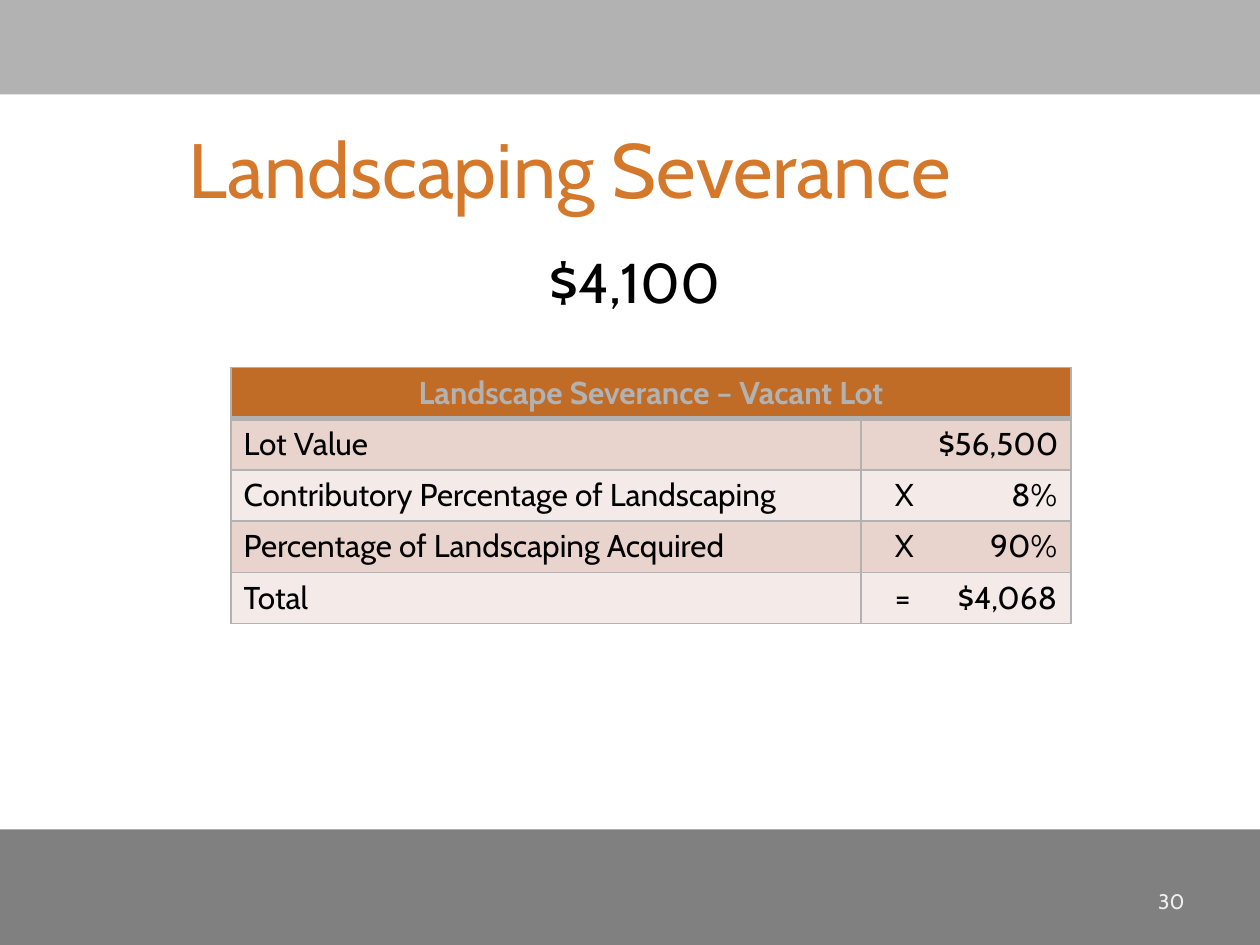
from lxml import etree
from pptx import Presentation
from pptx.dml.color import RGBColor
from pptx.enum.shapes import MSO_SHAPE
from pptx.enum.text import MSO_ANCHOR, MSO_AUTO_SIZE, PP_ALIGN
from pptx.oxml.ns import qn
from pptx.util import Inches, Pt

RECTANGLE = MSO_SHAPE.RECTANGLE
MIDDLE, TOP = MSO_ANCHOR.MIDDLE, MSO_ANCHOR.TOP
NO_FIT = MSO_AUTO_SIZE.NONE
LEFT, CENTER, RIGHT = PP_ALIGN.LEFT, PP_ALIGN.CENTER, PP_ALIGN.RIGHT
TITLE_AND_CONTENT = 1


def color(value):
    return RGBColor.from_string(value)


class SlideBuilder:
    font = "Cabin"
    white, black, grey, dark_grey = "FFFFFF", "000000", "B2B2B2", "808080"
    orange, header_fill = "D4782C", "C06C27"
    row_fills = ("E8D4CD", "F4EBE8")
    columns, rows = 120, 90
    sign_indent, cell_margin = 0.27, 0.1

    def __init__(self, presentation):
        self.unit_x = presentation.slide_width / self.columns
        self.unit_y = presentation.slide_height / self.rows
        layout = presentation.slide_layouts[TITLE_AND_CONTENT]
        self.slide = presentation.slides.add_slide(layout)

    def box(self, left, top, width, height):
        return (int(left * self.unit_x), int(top * self.unit_y),
                int(width * self.unit_x), int(height * self.unit_y))

    def fill(self, target, value):
        target.fill.solid()
        target.fill.fore_color.rgb = color(value)

    def set_text(self, frame, text, size, value, align, bold=False):
        frame.text = text
        paragraph = frame.paragraphs[0]
        paragraph.alignment = align
        font = paragraph.font
        font.name, font.size, font.bold = self.font, Pt(size), bold
        font.color.rgb = color(value)
        return paragraph

    def band(self, top, height, value):
        shape = self.slide.shapes.add_shape(
            RECTANGLE, *self.box(0, top, self.columns, height))
        shape.shadow.inherit = False
        shape.line.fill.background()
        self.fill(shape, value)

    def placeholder(self, index, box, text, size, value, anchor, right_margin=0.2):
        shape = self.slide.placeholders[index]
        shape.left, shape.top, shape.width, shape.height = self.box(*box)
        self.fill(shape, self.white)
        frame = shape.text_frame
        frame.auto_size, frame.vertical_anchor = NO_FIT, anchor
        frame.margin_left, frame.margin_right = Inches(0.2), Inches(right_margin)
        paragraph = self.set_text(frame, text, size, value, CENTER)
        paragraph.space_before = Pt(0)
        properties = paragraph._p.get_or_add_pPr()
        properties.set("marL", "0")
        properties.set("indent", "0")
        properties.insert_element_before(
            properties.makeelement(qn("a:buNone")), "a:tabLst", "a:defRPr", "a:extLst")

    def text(self, box, text, size, value, align):
        frame = self.slide.shapes.add_textbox(*self.box(*box)).text_frame
        frame.word_wrap, frame.vertical_anchor = True, MIDDLE
        self.set_text(frame, text, size, value, align)

    def borders(self, cell, top, bottom):
        properties = cell._tc.get_or_add_tcPr()
        for side, width in (("L", 1), ("R", 1), ("T", top), ("B", bottom)):
            line = etree.SubElement(properties, qn(f"a:ln{side}"), w=str(Pt(width)))
            solid = etree.SubElement(line, qn("a:solidFill"))
            etree.SubElement(solid, qn("a:srgbClr"), val=self.grey)

    def right_tab(self, paragraph, position):
        properties = paragraph._p.get_or_add_pPr()
        tabs = properties.makeelement(qn("a:tabLst"))
        etree.SubElement(tabs, qn("a:tab"), pos=str(position), algn="r")
        properties.insert_element_before(tabs, "a:defRPr", "a:extLst")

    def amount(self, cell, sign, value):
        if not sign:
            self.set_text(cell.text_frame, value, 18, self.black, RIGHT)
            return
        cell.margin_left = Inches(self.sign_indent)
        paragraph = self.set_text(
            cell.text_frame, f"{sign}\t{value}", 18, self.black, LEFT)
        column_width = int(20 * self.unit_x)
        self.right_tab(paragraph, column_width
                       - Inches(self.sign_indent + self.cell_margin + 0.01))

    def table(self, box, widths, heading, entries):
        count = len(entries) + 1
        frame = self.slide.shapes.add_table(count, len(widths), *self.box(*box))
        table = frame.table
        for column, width in zip(table.columns, widths):
            column.width = int(width * self.unit_x)
        for index, row in enumerate(table.rows):
            value = self.row_fills[(index - 1) % 2] if index else self.header_fill
            for cell in row.cells:
                self.borders(cell, 3 if index == 1 else 1, 1 if index else 3)
                self.fill(cell, value)
        header = table.cell(0, 0)
        header.merge(table.cell(0, len(widths) - 1))
        self.set_text(header.text_frame, heading, 18, self.grey, CENTER, True)
        for index, (label, sign, value) in enumerate(entries, 1):
            self.set_text(table.cell(index, 0).text_frame, label, 18, self.black, LEFT)
            self.amount(table.cell(index, 1), sign, value)


def main():
    presentation = Presentation()
    presentation.slide_width, presentation.slide_height = Inches(10), Inches(7.5)
    builder = SlideBuilder(presentation)
    builder.band(79, 11, builder.dark_grey)
    builder.band(0, 9, builder.grey)
    builder.placeholder(0, (3, 11, 114, 10), "Landscaping Severance",
                        44, builder.orange, MIDDLE, right_margin=1.15)
    builder.placeholder(1, (3, 23, 115, 54), "$4,100", 32, builder.black, TOP)
    builder.text((86, 83.4, 28, 4.8), "30", 12, "F0F0F0", RIGHT)
    builder.table((22, 35, 80, 24.4), (60, 20), "Landscape Severance – Vacant Lot", [
        ("Lot Value", "", "$56,500"),
        ("Contributory Percentage of Landscaping", "X", "8%"),
        ("Percentage of Landscaping Acquired", "X", "90%"),
        ("Total", "=", "$4,068"),
    ])
    presentation.save("out.pptx")


if __name__ == "__main__":
    main()
